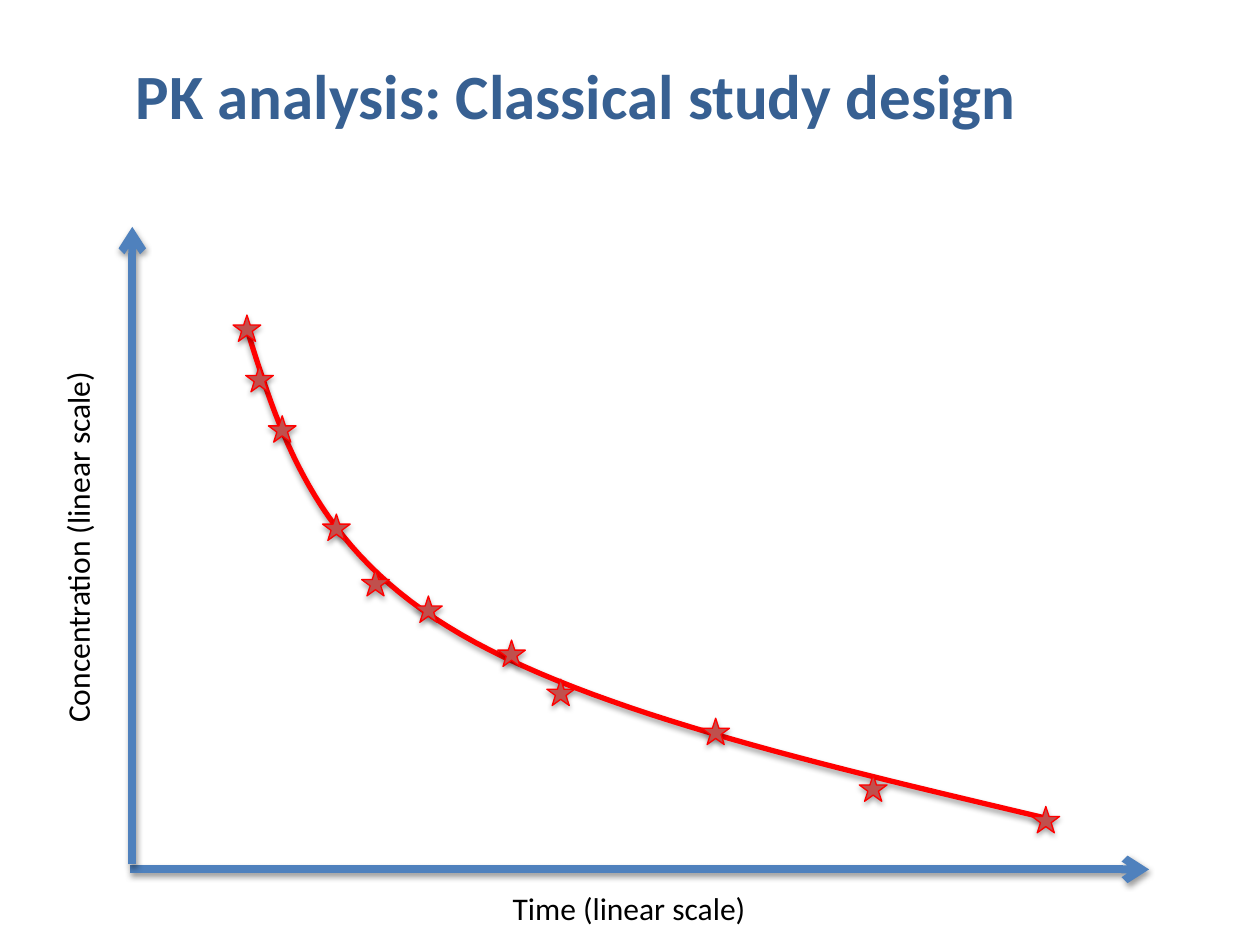
import pptx
import pptx.util
import pptx.dml.color
import pptx.enum.shapes
import pptx.enum.text
import pptx.oxml
import pptx.oxml.ns
from pptx.util import Inches

COLORS = {"title": "376092", "text": "000000", "axis": "4F81BD",
          "curve": "FF0000", "star": "C0504D", "shadow": "000000"}
FONT = "Calibri"

TITLE = "PK analysis: Classical study design"
X_LABEL = "Time (linear scale)"
Y_LABEL = "Concentration (linear scale)"

AXES = [((1.03, 6.9), (9.12, 6.9)), ((1.05, 6.86), (1.05, 1.8))]
DECAY = [((1.95, 2.58), (2.22, 3.45), (2.49, 4.32), (3.55, 4.97)),
         ((3.55, 4.97), (4.61, 5.63), (6.47, 6.06), (8.33, 6.5))]
STAR_SIZE = (0.22, 0.21)
SAMPLES = [(1.85, 2.5), (1.95, 2.9), (2.13, 3.3), (2.56, 4.08), (2.87, 4.52),
           (3.29, 4.73), (3.95, 5.08), (4.34, 5.39), (5.57, 5.7),
           (6.82, 6.15), (8.19, 6.4)]
CURVE_STEPS = 30


def rgb(name):
    """Return the named colour."""
    return pptx.dml.color.RGBColor.from_string(COLORS[name])


def add_shadow(sp, alpha=38, dist=1.6):
    """Give a shape or connector a soft shadow straight below it."""
    spPr = sp._element.spPr
    for old in spPr.findall(pptx.oxml.ns.qn("a:effectLst")):
        spPr.remove(old)
    spPr.append(pptx.oxml.parse_xml(
        f'<a:effectLst {pptx.oxml.ns.nsdecls("a")}>'
        f'<a:outerShdw blurRad="{pptx.util.Pt(3.1)}" dist="{pptx.util.Pt(dist)}" '
        f'dir="5400000" rotWithShape="0"><a:srgbClr val="{COLORS["shadow"]}">'
        f'<a:alpha val="{alpha * 1000}"/></a:srgbClr></a:outerShdw></a:effectLst>'))


def set_line(sp, color, width):
    """Set the line colour and width in points."""
    sp.line.color.rgb = rgb(color)
    sp.line.width = pptx.util.Pt(width)


def add_text(s, text, box, size=18, color="text", bold=False, rotation=0,
             wrap=False, anchor="TOP"):
    """Add a one-paragraph text box."""
    sp = s.shapes.add_textbox(*map(Inches, box))
    sp.rotation = rotation
    tf = sp.text_frame
    tf.word_wrap = wrap
    tf.vertical_anchor = pptx.enum.text.MSO_ANCHOR[anchor]
    r = tf.paragraphs[0].add_run()
    r.text = text
    r.font.name, r.font.size, r.font.bold = FONT, pptx.util.Pt(size), bold
    r.font.color.rgb = rgb(color)


def add_axis(s, start, end):
    """Add an axis with an arrowhead at its end."""
    sp = s.shapes.add_connector(pptx.enum.shapes.MSO_CONNECTOR.STRAIGHT,
                                *map(Inches, start + end))
    set_line(sp, "axis", 4.5)
    sp.line._get_or_add_ln().append(pptx.oxml.parse_xml(
        f'<a:tailEnd {pptx.oxml.ns.nsdecls("a")} type="arrow"/>'))
    add_shadow(sp)


def bezier(points, t):
    """Return the point at t on a cubic curve, in EMU."""
    weights = ((1 - t) ** 3, 3 * t * (1 - t) ** 2, 3 * t * t * (1 - t), t ** 3)
    return tuple(Inches(sum(w * p[i] for w, p in zip(weights, points)))
                 for i in (0, 1))


def add_decay_curve(s):
    """Add the smooth concentration curve."""
    points = [bezier(part, i / CURVE_STEPS)
              for part in DECAY for i in range(1, CURVE_STEPS + 1)]
    builder = s.shapes.build_freeform(*bezier(DECAY[0], 0))
    builder.add_line_segments(points, close=False)
    sp = builder.convert_to_shape()
    sp.fill.background()
    set_line(sp, "curve", 3)
    add_shadow(sp)


def add_star(s, left, top):
    """Add one sample marker."""
    sp = s.shapes.add_shape(pptx.enum.shapes.MSO_SHAPE.STAR_5_POINT,
                            *map(Inches, (left, top) + STAR_SIZE))
    sp.fill.solid()
    sp.fill.fore_color.rgb = rgb("star")
    set_line(sp, "curve", 0.75)
    add_shadow(sp, alpha=35, dist=1.8)


prs = pptx.Presentation()
prs.slide_width, prs.slide_height = Inches(10), Inches(7.5)
s = prs.slides.add_slide(prs.slide_layouts[6])

for start, end in AXES:
    add_axis(s, start, end)
add_decay_curve(s)
for left, top in SAMPLES:
    add_star(s, left, top)

add_text(s, TITLE, (0.98, 0.39, 8.57, 0.71), size=36, color="title",
         bold=True, wrap=True, anchor="BOTTOM")
add_text(s, X_LABEL, (3.97, 7.01, 2.07, 0.4))
add_text(s, Y_LABEL, (-0.9, 4.12, 3.03, 0.4), rotation=270)

prs.save("out.pptx")
